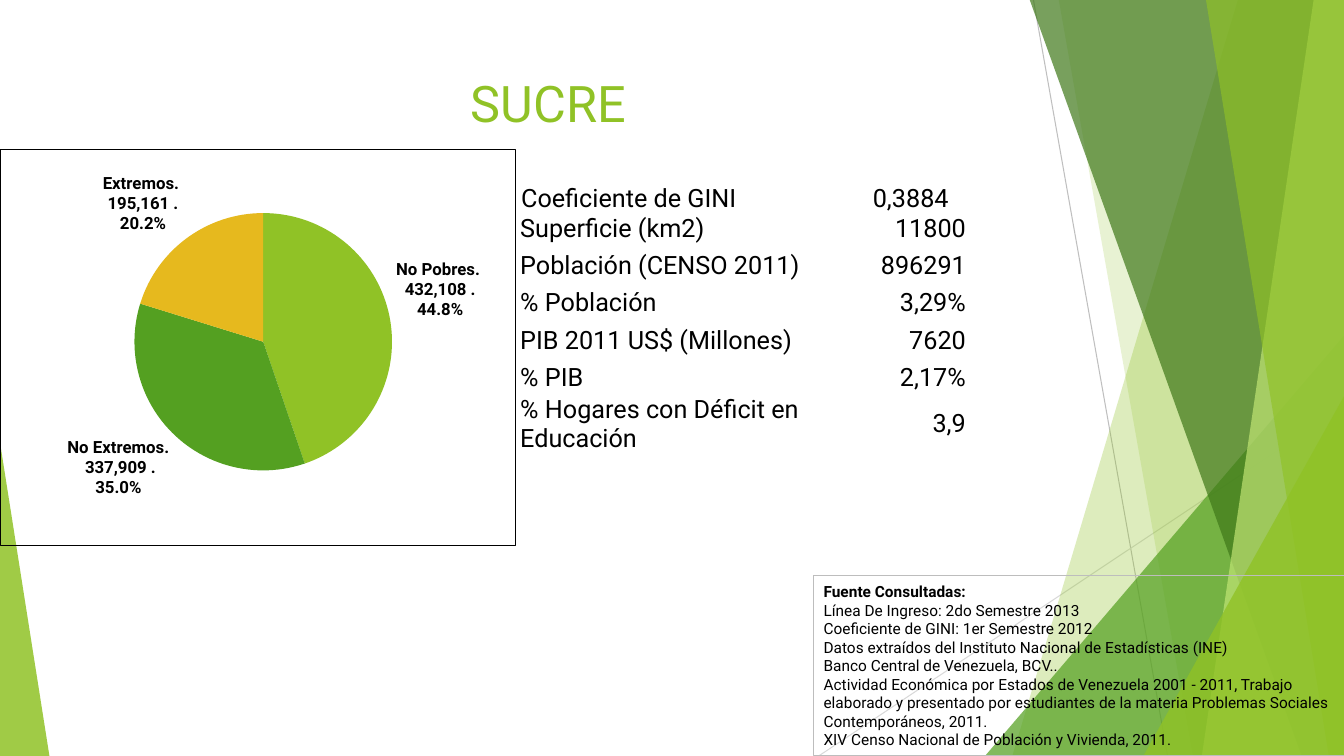
from lxml import etree
from pptx import Presentation
from pptx.chart.data import CategoryChartData
from pptx.dml.color import RGBColor
from pptx.enum.chart import XL_CHART_TYPE, XL_LABEL_POSITION
from pptx.enum.shapes import MSO_CONNECTOR, MSO_SHAPE
from pptx.enum.text import MSO_ANCHOR, PP_ALIGN
from pptx.oxml import parse_xml
from pptx.oxml.ns import nsdecls, qn
from pptx.util import Inches, Pt

LEFT, CENTER, RIGHT = PP_ALIGN.LEFT, PP_ALIGN.CENTER, PP_ALIGN.RIGHT
TOP, MIDDLE = MSO_ANCHOR.TOP, MSO_ANCHOR.MIDDLE
PIE, OUTSIDE_END = XL_CHART_TYPE.PIE, XL_LABEL_POSITION.OUTSIDE_END
STRAIGHT = MSO_CONNECTOR.STRAIGHT
TRIANGLE, RECTANGLE = MSO_SHAPE.ISOSCELES_TRIANGLE, MSO_SHAPE.RECTANGLE

FONT = "Roboto"
WIDTH, HEIGHT = 13.33, 7.5
COLORS = {
    "lime": "90C226", "green": "54A021", "forest": "3F7819", "pale": "C0E474",
    "gold": "E6B91E", "black": "000000", "white": "FFFFFF",
    "line": "BFBFBF", "light_line": "D9D9D9", "frame": "BDBDBD",
}

# Top-left x, bottom-left x, color, opacity
BANDS_BEHIND = [(12.28, 10.04, "lime", 30), (10.5, 11.83, "lime", 20)]
BANDS_FRONT = [(10.21, 12.91, "forest", 70), (13.03, 11.92, "pale", 70),
               (11.96, 13.18, "lime", 65)]

POVERTY = [("No Pobres", 432108, "lime"), ("No Extremos", 337909, "green"),
           ("Extremos", 195161, "gold")]
INDICATORS = [
    ("Superficie (km2)", "11800"),
    ("Población (CENSO 2011)", "896291"),
    ("% Población", "3,29%"),
    ("PIB 2011 US$ (Millones)", "7620"),
    ("% PIB", "2,17%"),
    ("% Hogares con Déficit en Educación", "3,9"),
]
SOURCES = [
    "Fuente Consultadas:",
    "Línea De Ingreso: 2do Semestre 2013",
    "Coeficiente de GINI: 1er Semestre 2012",
    "Datos extraídos del Instituto Nacional de Estadísticas (INE)",
    "Banco Central de Venezuela, BCV..",
    "Actividad Económica por Estados de Venezuela 2001 - 2011, Trabajo elaborado y "
    "presentado por estudiantes de la materia Problemas Sociales Contemporáneos, 2011.",
    "XIV Censo Nacional de Población y Vivienda, 2011.",
]


def rgb(name):
    return RGBColor.from_string(COLORS[name])


def inches(*lengths):
    return [Inches(length) for length in lengths]


class SlideBuilder:
    def __init__(self, slide):
        self.slide = slide
        self.shapes = slide.shapes

    def style_font(self, font, size, color="black", bold=False):
        font.name, font.size, font.bold = FONT, Pt(size), bold
        font.color.rgb = rgb(color)

    def fill_text(self, frame, lines, size, color="black", align=LEFT, anchor=TOP):
        frame.word_wrap = True
        frame.vertical_anchor = anchor
        frame.text = "\n".join(lines)
        for paragraph in frame.paragraphs:
            paragraph.alignment = align
            for run in paragraph.runs:
                self.style_font(run.font, size, color)

    def paint(self, shape, color, opacity):
        shape.shadow.inherit = False
        shape.fill.solid()
        shape.fill.fore_color.rgb = rgb(color)
        shape.line.fill.background()
        color_element = shape._element.spPr.find(qn("a:solidFill"))[0]
        etree.SubElement(color_element, qn("a:alpha"), val=str(opacity * 1000))

    def line(self, start, end, color):
        connector = self.shapes.add_connector(STRAIGHT, *inches(*start, *end))
        connector.line.color.rgb = rgb(color)
        connector.line.width = Pt(0.75)
        etree.SubElement(connector._element.spPr, qn("a:effectLst"))

    def band(self, top_x, bottom_x, color, opacity):
        """Draw a translucent band that reaches the right edge of the slide."""
        builder = self.shapes.build_freeform(*inches(top_x, -0.01))
        corners = [(WIDTH, -0.01), (WIDTH, HEIGHT), (bottom_x, HEIGHT)]
        builder.add_line_segments([inches(*corner) for corner in corners], close=True)
        self.paint(builder.convert_to_shape(), color, opacity)

    def triangle(self, box, apex, color, opacity):
        shape = self.shapes.add_shape(TRIANGLE, *inches(*box))
        shape.adjustments[0] = apex
        self.paint(shape, color, opacity)

    def text(self, box, line, size, color="black", align=LEFT):
        frame = self.shapes.add_textbox(*inches(*box)).text_frame
        self.fill_text(frame, [line], size, color, align)
        return frame

    def tabbed_text(self, box, label, value, tab):
        """Set a label and a value that ends at a right-aligned tab stop."""
        frame = self.text(box, f"{label}\t{value}", 18)
        properties = frame.paragraphs[0]._p.get_or_add_pPr()
        tabs = etree.SubElement(properties, qn("a:tabLst"))
        etree.SubElement(tabs, qn("a:tab"), pos=str(Inches(tab)), algn="r")

    def framed_text(self, box, lines, size):
        shape = self.shapes.add_shape(RECTANGLE, *inches(*box))
        shape.shadow.inherit = False
        shape.fill.background()
        shape.line.color.rgb = rgb("frame")
        shape.line.width = Pt(0.75)
        self.fill_text(shape.text_frame, lines, size, anchor=MIDDLE)
        shape.text_frame.paragraphs[0].runs[0].font.bold = True

    def pie(self, box, slices):
        data = CategoryChartData(number_format="_ #,##0_ ")
        data.categories = [name for name, _, _ in slices]
        data.add_series("Series 1", [value for _, value, _ in slices])
        chart = self.shapes.add_chart(PIE, *inches(*box), data).chart
        chart.has_legend = chart.has_title = False
        self.style_font(chart.font, 10)
        plot = chart.plots[0]
        plot.vary_by_categories = True
        for index, (_, _, color) in enumerate(slices):
            fill = plot.series[0].points[index].format.fill
            fill.solid()
            fill.fore_color.rgb = rgb(color)

        plot.has_data_labels = True
        labels = plot.data_labels
        labels.show_category_name = labels.show_value = labels.show_percentage = True
        labels.number_format, labels.number_format_is_linked = "0.0%", False
        labels.position = OUTSIDE_END
        self.style_font(labels.font, 12, bold=True)
        separator = etree.Element(qn("c:separator"))
        separator.text = ". "
        labels._element.find(qn("c:showBubbleSize")).addnext(separator)

        plot_area = chart._chartSpace.chart.plotArea
        for old_layout in plot_area.findall(qn("c:layout")):
            plot_area.remove(old_layout)
        plot_area.insert(0, parse_xml(
            f'<c:layout {nsdecls("c")}><c:manualLayout><c:layoutTarget val="inner"/>'
            '<c:xMode val="edge"/><c:yMode val="edge"/><c:x val="0.26"/><c:y val="0.16"/>'
            '<c:w val="0.5"/><c:h val="0.65"/></c:manualLayout></c:layout>'))
        plot_area.getparent().addnext(parse_xml(
            f'<c:spPr {nsdecls("c", "a")}><a:noFill/><a:ln w="{Pt(0.75)}"><a:solidFill>'
            f'<a:srgbClr val="{COLORS["black"]}"/></a:solidFill></a:ln></c:spPr>'))

    def table(self, box, rows, widths, heights):
        table = self.shapes.add_table(len(rows), len(widths), *inches(*box)).table
        table.first_row = table.horz_banding = False
        for column, width in zip(table.columns, widths):
            column.width = Inches(width)
        for index, (row, texts) in enumerate(zip(table.rows, rows)):
            row.height = Inches(heights[index % len(heights)])
            for cell, text, align in zip(row.cells, texts, (LEFT, RIGHT)):
                self.fill_text(cell.text_frame, [text], 18, align=align)
                cell.vertical_anchor = MIDDLE
                cell.margin_left = cell.margin_right = cell.margin_top = Inches(0.01)
                cell.margin_bottom = 0
                self.border(cell)
                cell.fill.background()

    def border(self, cell):
        properties = cell._tc.get_or_add_tcPr()
        for side in ("lnL", "lnR", "lnT", "lnB"):
            edge = etree.SubElement(properties, qn(f"a:{side}"), w=str(Pt(1)))
            fill = etree.SubElement(edge, qn("a:solidFill"))
            etree.SubElement(fill, qn("a:srgbClr"), val=COLORS["white"])


def main():
    presentation = Presentation()
    presentation.slide_width, presentation.slide_height = inches(WIDTH, HEIGHT)
    builder = SlideBuilder(presentation.slides.add_slide(presentation.slide_layouts[6]))

    builder.line((10.25, 0), (11.58, HEIGHT), "line")
    builder.line((WIDTH, 4.03), (8.12, HEIGHT), "light_line")
    for band in BANDS_BEHIND:
        builder.band(*band)
    builder.triangle((9.77, 3.33, 3.56, 4.17), 1, "green", 72)
    for band in BANDS_FRONT:
        builder.band(*band)
    builder.triangle((11.34, 3.93, 1.99, 3.57), 1, "lime", 80)
    builder.triangle((0, 4.39, 0.49, 3.11), 0, "lime", 85)

    builder.text((0.74, 0.67, 9.4, 1.44), "SUCRE", 36, "lime", CENTER)
    builder.tabbed_text((5.07, 1.76, 5.21, 0.4), "Coeficiente de GINI", "0,3884", 4.24)
    builder.pie((0, 1.48, 5.12, 3.94), POVERTY)
    builder.table((5.15, 2.11, 4.44, 2.4), INDICATORS, (2.82, 1.62), (0.22, 0.43))
    builder.framed_text((8.07, 5.71, 5.27, 1.79), SOURCES, 11)
    presentation.save("out.pptx")


if __name__ == "__main__":
    main()
